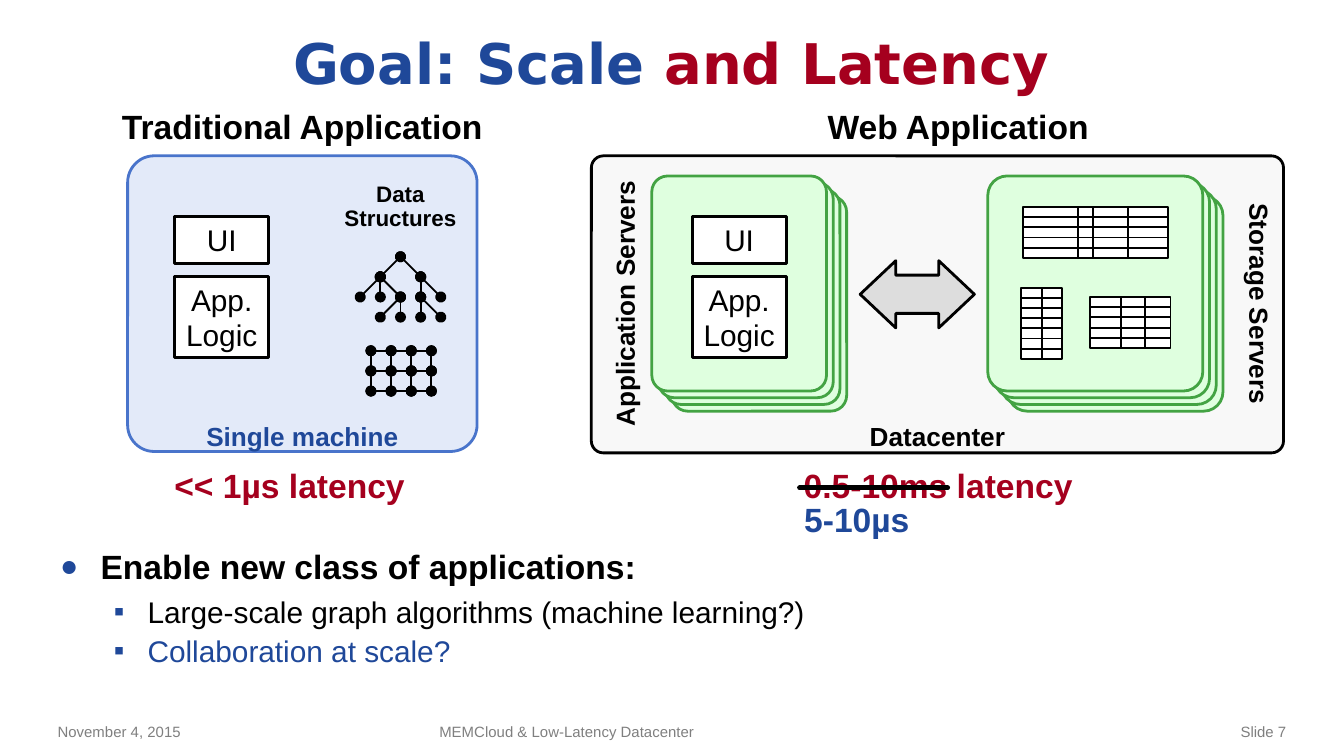
from lxml import etree
from pptx import Presentation
from pptx.dml.color import RGBColor
from pptx.enum.shapes import MSO_CONNECTOR, MSO_SHAPE
from pptx.enum.text import MSO_ANCHOR, PP_ALIGN
from pptx.oxml.ns import qn
from pptx.util import Pt

PX = 9144  # 100 px to the inch
ROUND, RECT = MSO_SHAPE.ROUNDED_RECTANGLE, MSO_SHAPE.RECTANGLE
ARROW, STRAIGHT = MSO_SHAPE.LEFT_RIGHT_ARROW, MSO_CONNECTOR.STRAIGHT
LEFT, CENTER, RIGHT = PP_ALIGN.LEFT, PP_ALIGN.CENTER, PP_ALIGN.RIGHT
TOP, MIDDLE = MSO_ANCHOR.TOP, MSO_ANCHOR.MIDDLE
BLACK, WHITE, GRAY = "000000", "FFFFFF", "7F7F7F"
BLUE, RED = "1F4899", "A5001E"
MINT, GREEN = "DFFFDF", "43A343"
rgb = RGBColor.from_string

prs = Presentation()
prs.slide_width = 1000 * PX
prs.slide_height = prs.slide_width * 9 // 16
s = prs.slides.add_slide(prs.slide_layouts[6])


def add_box(x, y, w, h, kind=None, fill=WHITE, edge=BLACK, weight=1.5, adj=(),
            runs=(), size=18, bold=False, font="Arial", align=CENTER,
            anchor=TOP, wrap=True, inset=(10, 5), spacing=None):
    """Add a preset shape, or a text box without kind; runs are (text, colour)."""
    frame = x * PX, y * PX, w * PX, h * PX
    if kind is None:
        sp = s.shapes.add_textbox(*frame)
    else:
        sp = s.shapes.add_shape(kind, *frame)
        sp.shadow.inherit = False
        sp.fill.solid()
        sp.fill.fore_color.rgb = rgb(fill)
        sp.line.color.rgb = rgb(edge)
        sp.line.width = Pt(weight)
        for i, value in enumerate(adj):
            sp.adjustments[i] = value
    tf = sp.text_frame
    tf.word_wrap = wrap
    tf.vertical_anchor = anchor
    tf.margin_left = tf.margin_right = inset[0] * PX
    tf.margin_top = tf.margin_bottom = inset[1] * PX
    if runs:
        p = tf.paragraphs[0]
        p.alignment = align
        p.line_spacing = spacing
        p.font.name, p.font.size, p.font.bold = font, Pt(size), bold
        p.font.color.rgb = rgb(runs[0][1])
        if len(runs) == 1:
            p.text = runs[0][0]
        else:
            for text, color in runs:
                r = p.add_run()
                r.text = text
                r.font.color.rgb = rgb(color)
    return sp


def add_line(x1, y1, x2, y2, weight=1, dots=False):
    """Add a black line, with a dot at each end if asked."""
    c = s.shapes.add_connector(STRAIGHT, *(round(v * PX) for v in (x1, y1, x2, y2)))
    c.line.color.rgb = rgb(BLACK)
    c.line.width = Pt(weight)
    etree.SubElement(c._element.spPr, qn("a:effectLst"))
    ln = c.line._get_or_add_ln()
    if dots:
        for end in ("a:headEnd", "a:tailEnd"):
            etree.SubElement(ln, qn(end), type="oval")
    return ln


# Footer
for x, w, text, align in ((33, 250, "November 4, 2015", LEFT),
                          (317, 375, "MEMCloud & Low-Latency Datacenter", LEFT),
                          (717, 250, "Slide 7", RIGHT)):
    add_box(x, 532, w, 24, runs=[(text, GRAY)], size=8, align=align, anchor=MIDDLE)

# Title
add_box(33, 16, 933, 60, runs=[("Goal: Scale ", BLUE), ("and Latency", RED)],
        size=30, bold=True, font="DejaVu Sans", anchor=MIDDLE)

# Bullets
tf = add_box(35, 401, 930, 105).text_frame
bullets = (
    ("Enable new class of applications:", 0, 18, BLACK, 5, 30, 30, "●", 90),
    ("Large-scale graph algorithms (machine learning?)", 1, 16, BLACK, 4, 65, 25, "▪", 100),
    ("Collaboration at scale?", 1, 16, BLUE, 2, 65, 25, "▪", 100),
)
for i, (text, level, size, color, before, indent, hang, mark, scale) in enumerate(bullets):
    p = tf.add_paragraph() if i else tf.paragraphs[0]
    p.text, p.level, p.space_before = text, level, Pt(before)
    p.font.name, p.font.size, p.font.bold = "Arial", Pt(size), level == 0
    p.font.color.rgb = rgb(color)
    pPr = p._p.get_or_add_pPr()
    pPr.set("marL", str(indent * PX))
    pPr.set("indent", str(-hang * PX))
    bu_color = etree.Element(qn("a:buClr"))
    etree.SubElement(bu_color, qn("a:srgbClr"), val=BLUE)
    bu_size = etree.Element(qn("a:buSzPct"), val=str(scale * 1000))
    bu_font = etree.Element(qn("a:buFont"), typeface="Arial")
    bu_char = etree.Element(qn("a:buChar"), char=mark)
    for element in (bu_color, bu_size, bu_font, bu_char):
        pPr.find(qn("a:defRPr")).addprevious(element)

# Machines: one on the left, stacks of servers in the datacenter
add_box(95, 116, 260, 220, ROUND, "E3EAF9", "4974CB", adj=[0.09])
add_box(440, 116, 515, 221, ROUND, "F8F8F8", adj=[0.04])
for x, w in ((485, 130), (735, 160)):
    for shift in (15, 10, 5, 0):
        add_box(x + shift, 131 + shift, w, 160, ROUND, MINT, GREEN, adj=[0.09])
add_box(640, 194, 85, 50, ARROW, "DDDDDD", adj=[0.57, 0.53])
for x in (130, 515):
    for y, h, text in ((161, 35, "UI"), (206, 60, "App.\nLogic")):
        add_box(x, y, 70, h, RECT, runs=[(text, BLACK)], size=16,
                anchor=MIDDLE, wrap=False)

# Labels
add_box(256, 136, 84, 36, runs=[("Data\nStructures", BLACK)], size=12, bold=True,
        wrap=False, inset=(0, 0), spacing=0.9)
for x, y, w, h, text, color, size, inset in (
        (80, 74, 290, 40, "Traditional Application", BLACK, 18, (10, 5)),
        (576, 74, 274, 40, "Web Application", BLACK, 18, (10, 5)),
        (119, 341, 193, 40, "<< 1µs latency", RED, 18, (10, 5)),
        (552, 341, 292, 40, "0.5-10ms latency", RED, 18, (10, 5)),
        (598, 371, 79, 30, "5-10µs", BLUE, 18, (0, 0)),
        (143, 313, 164, 24, "Single machine", BLUE, 14, (10, 0)),
        (637, 313, 121, 24, "Datacenter", BLACK, 14, (10, 0))):
    add_box(x, y, w, h, runs=[(text, color)], size=size, bold=True,
            wrap=False, inset=inset)
for x, text, angle in ((355, "Application Servers", 270), (827, "Storage Servers", 90)):
    sp = add_box(x, 209, 220, 34, runs=[(text, BLACK)], size=14, bold=True)
    sp.rotation = angle

# Tree: edges as (column, row, child column), in steps from the root
STEP = 15
for col, row, child in ((0, 0, -1), (0, 0, 1), (-1, 1, -2), (-1, 1, -1), (-1, 1, 0),
                        (1, 1, 1), (1, 1, 2), (0, 2, -1), (0, 2, 0), (1, 2, 1), (1, 2, 2)):
    add_line(298 + col * STEP, 191 + row * STEP,
             298 + child * STEP, 191 + (row + 1) * STEP, dots=True)

# Mesh of 4 by 3 nodes
for col in range(4):
    for row in range(3):
        x, y = 276 + col * STEP, 261 + row * STEP
        if col < 3:
            add_line(x, y, x + STEP, y, dots=True)
        if row < 2:
            add_line(x, y, x, y + STEP, dots=True)

# Storage tables
for x, y, w, h, rows, dividers in ((761, 154, 108, 38, 5, (41, 52, 78)),
                                   (760, 214, 30, 53, 7, (15,)),
                                   (811, 221, 60, 38, 5, (23, 41))):
    add_box(x, y, w, h, RECT, weight=1)
    for i in range(1, rows):
        add_line(x, y + h * i / rows, x + w, y + h * i / rows)
    for offset in dividers:
        add_line(x + offset, y, x + offset, y + h)

# Strike through the old latency
add_line(595, 363, 705, 363, weight=2.75).set("cap", "rnd")

prs.save("out.pptx")
